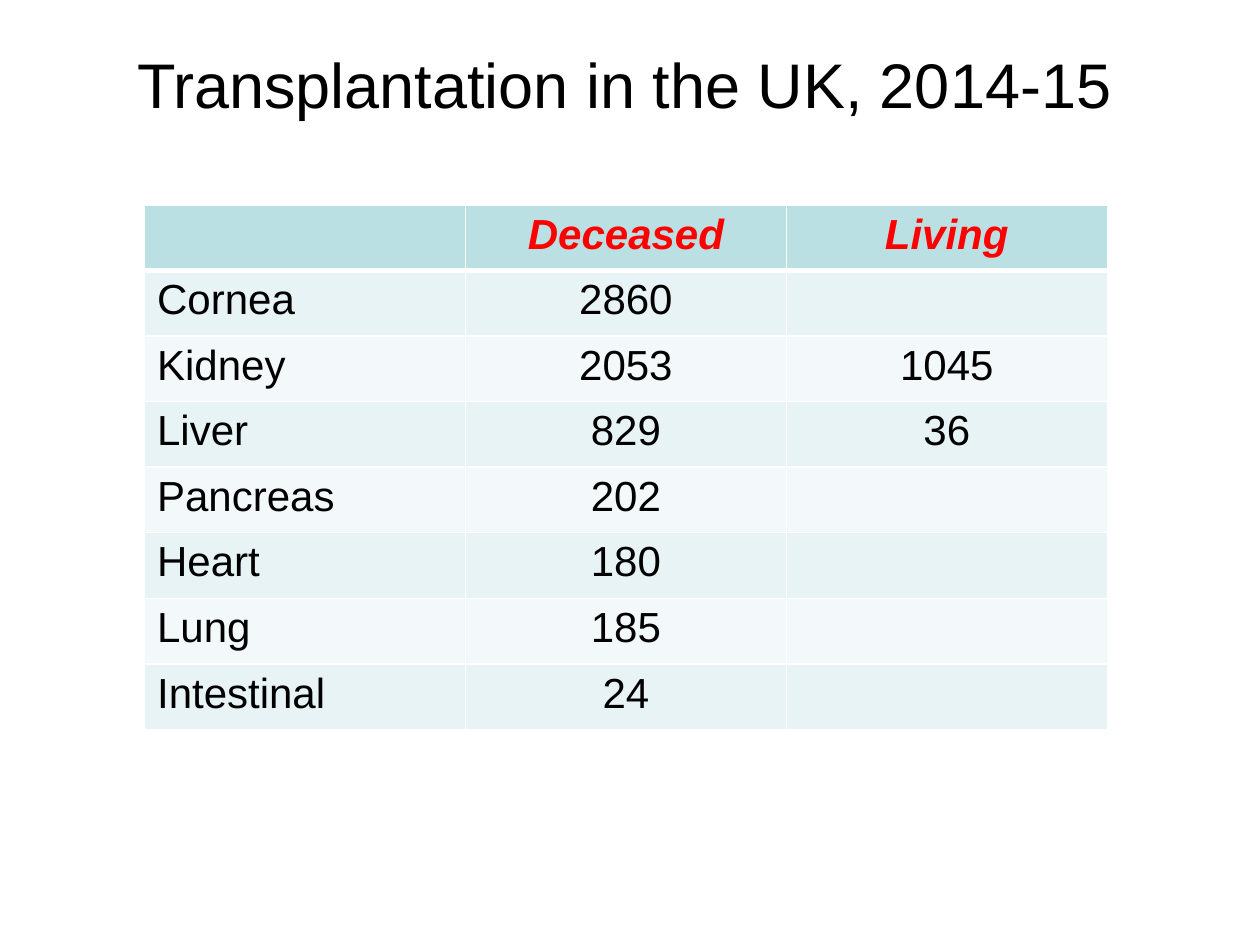
from dataclasses import dataclass

import lxml.etree
import pptx
import pptx.dml.color
import pptx.enum.text
import pptx.oxml.ns
import pptx.util

Pt = pptx.util.Pt
RGB = pptx.dml.color.RGBColor.from_string
LEFT = pptx.enum.text.PP_ALIGN.LEFT
CENTER = pptx.enum.text.PP_ALIGN.CENTER


@dataclass(frozen=True)
class Theme:
    font: str = "Arial"
    title_size: float = 36
    table_size: float = 24
    text: str = "000000"
    heading: str = "FF0000"
    header_fill: str = "BBE0E3"
    band_fills: tuple[str, str] = ("E7F3F4", "F3F9FA")
    border: str = "FFFFFF"
    border_width: float = 1
    header_rule: float = 3


@dataclass(frozen=True)
class Transplant:
    organ: str
    deceased: str
    living: str = ""


THEME = Theme()
HEADINGS = Transplant("", "Deceased", "Living")
TRANSPLANTS = (
    Transplant("Cornea", "2860"),
    Transplant("Kidney", "2053", "1045"),
    Transplant("Liver", "829", "36"),
    Transplant("Pancreas", "202"),
    Transplant("Heart", "180"),
    Transplant("Lung", "185"),
    Transplant("Intestinal", "24"),
)
COLUMN_WIDTH, ROW_HEIGHT = 183.4, 37.5


def write(frame, text: str, size: float, color: str, align, **emphasis: bool) -> None:
    """Put one formatted paragraph into a text frame."""
    paragraph = frame.paragraphs[0]
    paragraph.alignment = align
    run = paragraph.add_run()
    run.text = text
    font_format = {"name": THEME.font, "size": Pt(size), **emphasis}
    for attribute, value in font_format.items():
        setattr(run.font, attribute, value)
    run.font.color.rgb = RGB(color)


def add_border(cell, side: str, width: float) -> None:
    """Add a solid line on one side (L, R, T or B) of a cell."""
    qn = pptx.oxml.ns.qn
    line = lxml.etree.SubElement(
        cell._tc.get_or_add_tcPr(), qn(f"a:ln{side}"), w=str(Pt(width)))
    fill = lxml.etree.SubElement(line, qn("a:solidFill"))
    lxml.etree.SubElement(fill, qn("a:srgbClr"), val=THEME.border)


def fill_row(table, index: int, entry: Transplant) -> None:
    """Write and style one table row; row 0 holds the headings."""
    is_header = index == 0
    fill = THEME.header_fill if is_header else THEME.band_fills[(index - 1) % 2]
    color = THEME.heading if is_header else THEME.text
    widths = {
        "L": THEME.border_width,
        "R": THEME.border_width,
        "T": THEME.header_rule if index == 1 else THEME.border_width,
        "B": THEME.header_rule if is_header else THEME.border_width,
    }
    for column, text in enumerate((entry.organ, entry.deceased, entry.living)):
        cell = table.cell(index, column)
        for side, width in widths.items():
            add_border(cell, side, width)
        cell.fill.solid()
        cell.fill.fore_color.rgb = RGB(fill)
        if text:
            write(cell.text_frame, text, THEME.table_size, color,
                  CENTER if column else LEFT, bold=is_header, italic=is_header)


def add_title(slide, text: str) -> None:
    title = slide.shapes.add_textbox(Pt(23.8), Pt(18), Pt(666), Pt(66)).text_frame
    frame_format = {
        "word_wrap": True,
        "margin_top": Pt(7.8),
        "vertical_anchor": pptx.enum.text.MSO_ANCHOR.TOP,
    }
    for attribute, value in frame_format.items():
        setattr(title, attribute, value)
    write(title, text, THEME.title_size, THEME.text, CENTER)


def add_transplant_table(slide) -> None:
    entries = (HEADINGS, *TRANSPLANTS)
    table = slide.shapes.add_table(
        len(entries), 3, Pt(82.6), Pt(117),
        Pt(3 * COLUMN_WIDTH), Pt(len(entries) * ROW_HEIGHT)).table
    for column in table.columns:
        column.width = Pt(COLUMN_WIDTH)
    for index, entry in enumerate(entries):
        table.rows[index].height = Pt(ROW_HEIGHT)
        fill_row(table, index, entry)


def main() -> None:
    presentation = pptx.Presentation()
    presentation.slide_width, presentation.slide_height = Pt(720), Pt(540)
    slide = presentation.slides.add_slide(presentation.slide_layouts[6])

    # Heading
    add_title(slide, "Transplantation in the UK, 2014-15")
    # Transplants by organ and donor
    add_transplant_table(slide)

    presentation.save("out.pptx")


if __name__ == "__main__":
    main()
